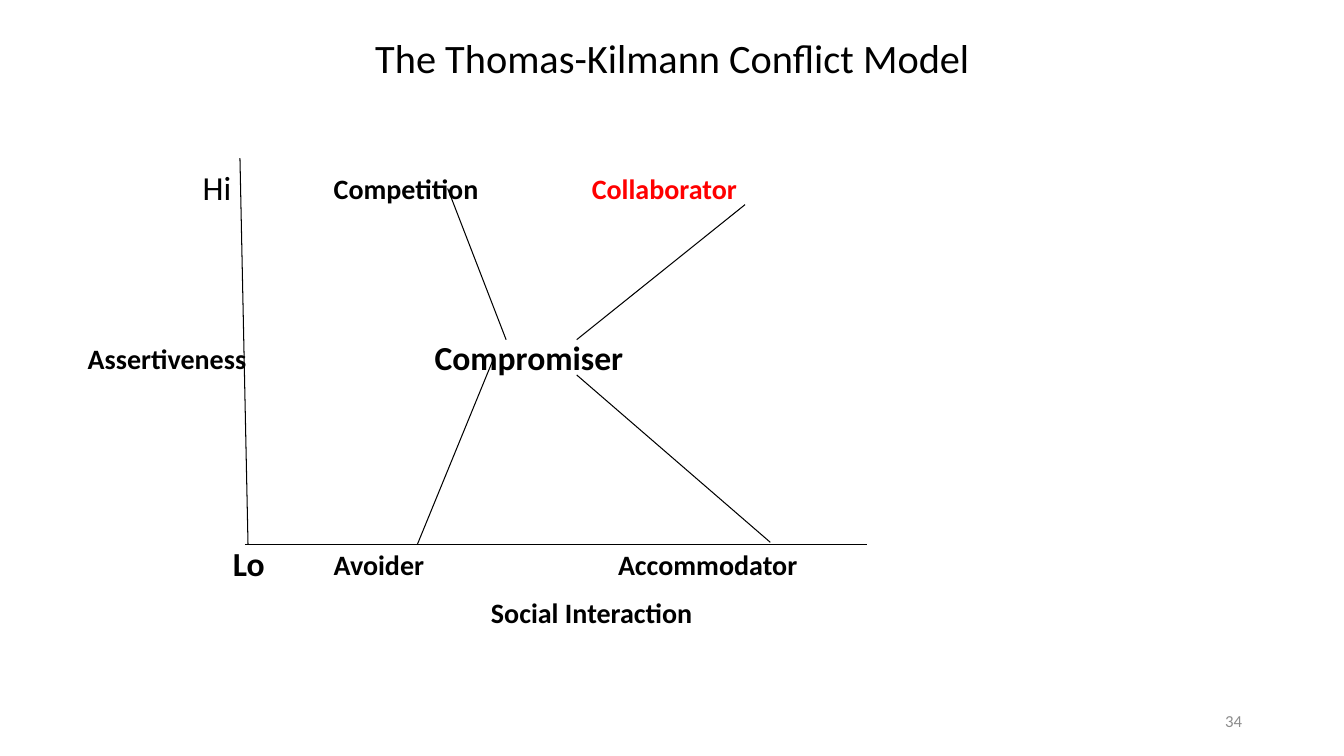
from dataclasses import dataclass

from lxml.etree import SubElement
from pptx import Presentation
from pptx.dml.color import RGBColor
from pptx.enum.shapes import MSO_CONNECTOR
from pptx.enum.text import MSO_ANCHOR, PP_ALIGN
from pptx.oxml.ns import qn
from pptx.util import Emu, Pt

SCALE = 9144
HIGH = 40


@dataclass
class Label:
    text: str
    left: int
    mid: int
    width: int
    size: int = 20
    bold: bool = True
    color: str = "000000"
    align: PP_ALIGN = PP_ALIGN.LEFT


@dataclass
class Line:
    x1: int
    y1: int
    x2: int
    y2: int


LABELS = [
    Label("Hi", 201, 186, 40, 24, False),
    Label("Competition", 331, 187, 160),
    Label("Collaborator", 587, 187, 160, color="FF0000"),
    Label("Assertiveness", 87, 355, 170),
    Label("Compromiser", 431, 354, 200, 24),
    Label("Lo", 231, 559, 40, 24),
    Label("Avoider", 331, 560, 110),
    Label("Accommodator", 613, 560, 190),
    Label("Social Interaction", 487, 607, 210),
    Label("34", 942, 715, 290, 12, False, "8C8C8C", PP_ALIGN.RIGHT),
]

LINES = [
    Line(238, 157, 246, 540),
    Line(243, 540, 860, 540),
    Line(414, 540, 489, 357),
    Line(572, 372, 764, 538),
    Line(572, 337, 739, 203),
    Line(444, 187, 502, 337),
]


def px(value: int) -> Emu:
    return Emu(value * SCALE)


def paint(color: str) -> RGBColor:
    return RGBColor.from_string(color)


def apply(target, values: dict) -> None:
    for name, value in values.items():
        setattr(target, name, value)


def style(para, size: float, bold: bool, color: str, align: PP_ALIGN) -> None:
    para.alignment = align
    apply(para.font, {"name": "Calibri", "size": Pt(size), "bold": bold})
    para.font.color.rgb = paint(color)


def add_title(slide, text: str) -> None:
    title = slide.shapes.title
    apply(title, {"left": px(242), "top": px(33),
                  "width": px(850), "height": px(100)})
    frame = title.text_frame
    apply(frame, {"text": text, "word_wrap": True,
                  "vertical_anchor": MSO_ANCHOR.TOP})
    para = frame.paragraphs[0]
    para.line_spacing = 0.9
    style(para, 28.8, False, "000000", PP_ALIGN.CENTER)


def add_label(slide, label: Label) -> None:
    box = slide.shapes.add_textbox(px(label.left), px(label.mid - HIGH // 2),
                                   px(label.width), px(HIGH))
    frame = box.text_frame
    apply(frame, {"text": label.text, "word_wrap": True,
                  "vertical_anchor": MSO_ANCHOR.MIDDLE,
                  "margin_left": 0, "margin_right": 0,
                  "margin_top": 0, "margin_bottom": 0})
    style(frame.paragraphs[0], label.size, label.bold, label.color, label.align)


def add_line(slide, line: Line) -> None:
    link = slide.shapes.add_connector(MSO_CONNECTOR.STRAIGHT,
                                      px(line.x1), px(line.y1),
                                      px(line.x2), px(line.y2))
    link.line.width = Pt(0.75)
    link.line.color.rgb = paint("000000")
    SubElement(link._element.spPr, qn("a:effectLst"))


def main() -> None:
    deck = Presentation()
    apply(deck, {"slide_width": px(1333), "slide_height": px(750)})
    slide = deck.slides.add_slide(deck.slide_layouts[5])
    add_title(slide, "The Thomas-Kilmann Conflict Model")
    for label in LABELS:
        add_label(slide, label)
    for line in LINES:
        add_line(slide, line)
    deck.save("out.pptx")


if __name__ == "__main__":
    main()
